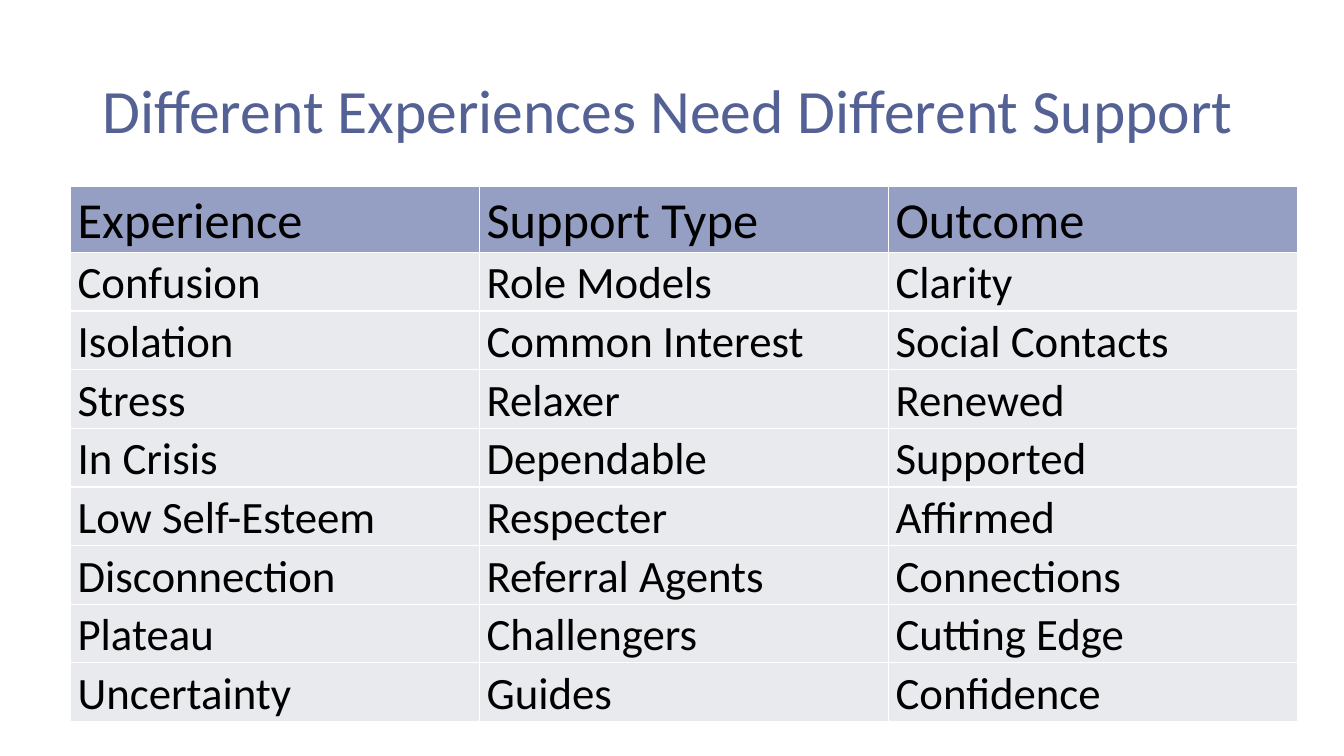
from lxml import etree
from pptx import Presentation
from pptx.dml.color import RGBColor
from pptx.enum.text import MSO_ANCHOR, MSO_AUTO_SIZE, PP_ALIGN
from pptx.oxml.ns import qn
from pptx.util import Inches, Pt

LEFT = PP_ALIGN.LEFT
TOP = MSO_ANCHOR.TOP
MIDDLE = MSO_ANCHOR.MIDDLE
NO_FIT = MSO_AUTO_SIZE.NONE
TITLE_ONLY = 5

ROWS = [
    ("Experience", "Support Type", "Outcome"),
    ("Confusion", "Role Models", "Clarity"),
    ("Isolation", "Common Interest", "Social Contacts"),
    ("Stress", "Relaxer", "Renewed"),
    ("In Crisis", "Dependable", "Supported"),
    ("Low Self-Esteem", "Respecter", "Affirmed"),
    ("Disconnection", "Referral Agents", "Connections"),
    ("Plateau", "Challengers", "Cutting Edge"),
    ("Uncertainty", "Guides", "Confidence"),
]


def rgb(color):
    return RGBColor.from_string(color)


class SlideBuilder:
    font = "Calibri"
    title_color = "546194"
    text_color = "000000"
    header_fill = "959EC3"
    body_fill = "E9EAEE"
    border_color = "FFFFFF"

    def __init__(self, prs):
        self.s = prs.slides.add_slide(prs.slide_layouts[TITLE_ONLY])

    def add_text(self, tf, text, size, color, spacing):
        p = tf.paragraphs[0]
        p.alignment = LEFT
        p.line_spacing = spacing
        r = p.add_run()
        r.text = text
        r.font.name = self.font
        r.font.size = Pt(size)
        r.font.color.rgb = rgb(color)

    def title(self, text, left, top, width, height):
        sp = self.s.shapes.title
        sp.left, sp.top = Inches(left), Inches(top)
        sp.width, sp.height = Inches(width), Inches(height)
        tf = sp.text_frame
        tf.word_wrap = True
        tf.auto_size = NO_FIT
        tf.vertical_anchor = MIDDLE
        self.add_text(tf, text, 44, self.title_color, 0.9)

    def borders(self, cell):
        tc_pr = cell._tc.get_or_add_tcPr()
        for i, side in enumerate(("lnL", "lnR", "lnT", "lnB")):
            ln = etree.Element(qn(f"a:{side}"), w=str(Pt(1)))
            fill = etree.SubElement(ln, qn("a:solidFill"))
            etree.SubElement(fill, qn("a:srgbClr"), val=self.border_color)
            tc_pr.insert(i, ln)

    def cell(self, cell, text, size, fill):
        cell.margin_left = cell.margin_right = Inches(0.07)
        cell.margin_top = cell.margin_bottom = 0
        cell.vertical_anchor = TOP
        cell.fill.solid()
        cell.fill.fore_color.rgb = rgb(fill)
        self.borders(cell)
        self.add_text(cell.text_frame, text, size, self.text_color, 1.07)

    def table(self, rows, left, top, width, header_height, row_height):
        height = header_height + row_height * (len(rows) - 1)
        table = self.s.shapes.add_table(
            len(rows), len(rows[0]),
            Inches(left), Inches(top), Inches(width), Inches(height),
        ).table
        table.horz_banding = False
        for i, row in enumerate(rows):
            header = i == 0
            table.rows[i].height = Inches(header_height if header else row_height)
            size = 36 if header else 32
            fill = self.header_fill if header else self.body_fill
            for j, text in enumerate(row):
                self.cell(table.cell(i, j), text, size, fill)


def main():
    prs = Presentation()
    prs.slide_width, prs.slide_height = Inches(13.33), Inches(7.5)
    slide = SlideBuilder(prs)
    slide.title("Different Experiences Need Different Support", 0.92, 0.4, 11.5, 1.45)
    slide.table(ROWS, 0.7, 1.85, 12.17, 0.62, 0.53)
    prs.save("out.pptx")


if __name__ == "__main__":
    main()
